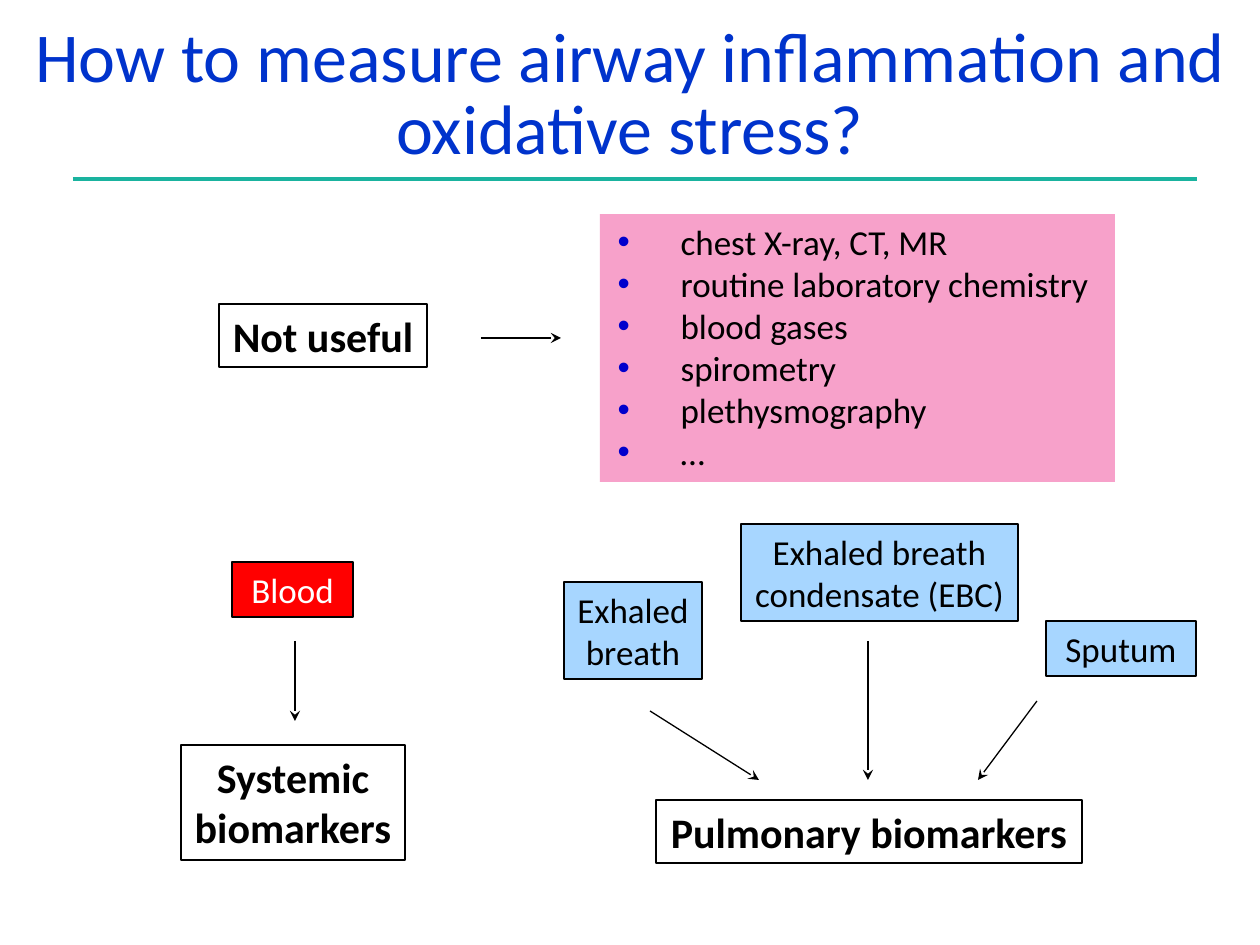
from dataclasses import dataclass

from lxml.etree import SubElement as Sub
from pptx import Presentation
from pptx.dml.color import RGBColor as Rgb
from pptx.enum.shapes import MSO_CONNECTOR as Conn, MSO_SHAPE as Kind
from pptx.enum.text import MSO_ANCHOR as Anchor, MSO_AUTO_SIZE as Fit, PP_ALIGN as Align
from pptx.oxml.ns import qn
from pptx.util import Pt

PX = 914400 / 126


@dataclass(frozen=True)
class Theme:
    font: str = "Calibri"
    ink: str = "000000"
    white: str = "FFFFFF"
    title: str = "0033CC"
    rule: str = "1AB39F"
    dot: str = "0000CC"
    pink: str = "F7A1CA"
    sky: str = "A7D6FF"
    red: str = "FF0000"
    head: int = 40
    big: int = 24
    small: int = 20


T = Theme()


def px(*vals):
    return [round(v * PX) for v in vals]


def place(shape, box):
    shape.left, shape.top, shape.width, shape.height = px(*box)


def write(frame, lines, size, color, align=Align.CENTER, bold=False):
    for i, line in enumerate(lines):
        para = frame.paragraphs[0] if i == 0 else frame.add_paragraph()
        para.alignment = align
        para.space_before = para.space_after = Pt(0)
        run = para.add_run()
        run.text = line
        font = run.font
        font.name, font.size, font.bold = T.font, Pt(size), bold
        font.color.rgb = Rgb.from_string(color)


def add_rect(slide, box, fill=None, edge=None):
    rect = slide.shapes.add_shape(Kind.RECTANGLE, *px(*box))
    rect.shadow.inherit = False
    if fill:
        rect.fill.solid()
        rect.fill.fore_color.rgb = Rgb.from_string(fill)
    else:
        rect.fill.background()
    if edge:
        rect.line.color.rgb = Rgb.from_string(edge)
        rect.line.width = Pt(0.75)
    else:
        rect.line.fill.background()
    return rect


def add_label(slide, box, lines, fill=None, color=T.ink, wrap=False):
    """Filled labels are samples; plain bold ones are headings."""
    frame = add_rect(slide, box, fill, T.ink).text_frame
    frame.word_wrap = wrap
    frame.auto_size = Fit.SHAPE_TO_FIT_TEXT
    frame.vertical_anchor = Anchor.TOP
    write(frame, lines, T.small if fill else T.big, color, bold=not fill)


def add_line(slide, ends, color=T.ink, width=0.75, arrow=True):
    line = slide.shapes.add_connector(Conn.STRAIGHT, *px(*ends))
    line.line.color.rgb = Rgb.from_string(color)
    line.line.width = Pt(width)
    if arrow:
        Sub(line.get_or_add_ln(), qn("a:tailEnd"), type="stealth")
    Sub(line.element.spPr, qn("a:effectLst"))


def set_title(slide, box, text):
    title = slide.shapes.title
    place(title, box)
    frame = title.text_frame
    frame.auto_size = Fit.NONE
    frame.vertical_anchor = Anchor.BOTTOM
    write(frame, [text], T.head, T.title)
    frame.paragraphs[0].line_spacing = 0.85


def set_list(slide, box, items):
    body = slide.placeholders[1]
    place(body, box)
    frame = body.text_frame
    frame.auto_size = Fit.NONE
    write(frame, items, T.small, T.ink, Align.JUSTIFY)
    for para in frame.paragraphs:
        props = para._p.get_or_add_pPr()
        props.set("marL", str(px(63)[0]))
        props.set("indent", str(px(-63)[0]))
        Sub(Sub(props, qn("a:buClr")), qn("a:srgbClr"), val=T.dot)
        Sub(props, qn("a:buFont"), typeface="Arial")
        Sub(props, qn("a:buChar"), char="•")
    return body


def main():
    deck = Presentation()
    deck.slide_width, deck.slide_height = px(1260, 945)
    slide = deck.slides.add_slide(deck.slide_layouts[1])

    # Title and rule
    set_title(slide, (0, 26, 1260, 149),
              "How to measure airway inflammation and oxidative stress?")
    add_line(slide, (73, 179, 1197, 179), T.rule, 2.25, arrow=False)

    # Methods that do not help, on a pink panel behind the list
    items = ["chest X-ray, CT, MR", "routine laboratory chemistry", "blood gases",
             "spirometry", "plethysmography", "…"]
    body = set_list(slide, (605, 214, 511, 267), items)
    panel = add_rect(slide, (600, 214, 515, 268), T.pink)
    body.element.addprevious(panel.element)
    add_label(slide, (219, 304, 208, 63), ["Not useful"])

    # Samples
    add_label(slide, (232, 562, 121, 55), ["Blood"], T.red, T.white, wrap=True)
    add_label(slide, (564, 582, 138, 97), ["Exhaled", "breath"], T.sky)
    add_label(slide, (741, 524, 277, 97), ["Exhaled breath", "condensate (EBC)"], T.sky)
    add_label(slide, (1046, 621, 150, 55), ["Sputum"], T.sky, wrap=True)

    # Biomarkers
    add_label(slide, (181, 745, 224, 115), ["Systemic", "biomarkers"])
    add_label(slide, (656, 800, 426, 63), ["Pulmonary biomarkers"])

    # Arrows
    for ends in [(481, 338, 561, 338), (295, 641, 295, 721), (650, 711, 759, 780),
                 (868, 641, 868, 780), (1037, 701, 978, 780)]:
        add_line(slide, ends)

    deck.save("out.pptx")


if __name__ == "__main__":
    main()
